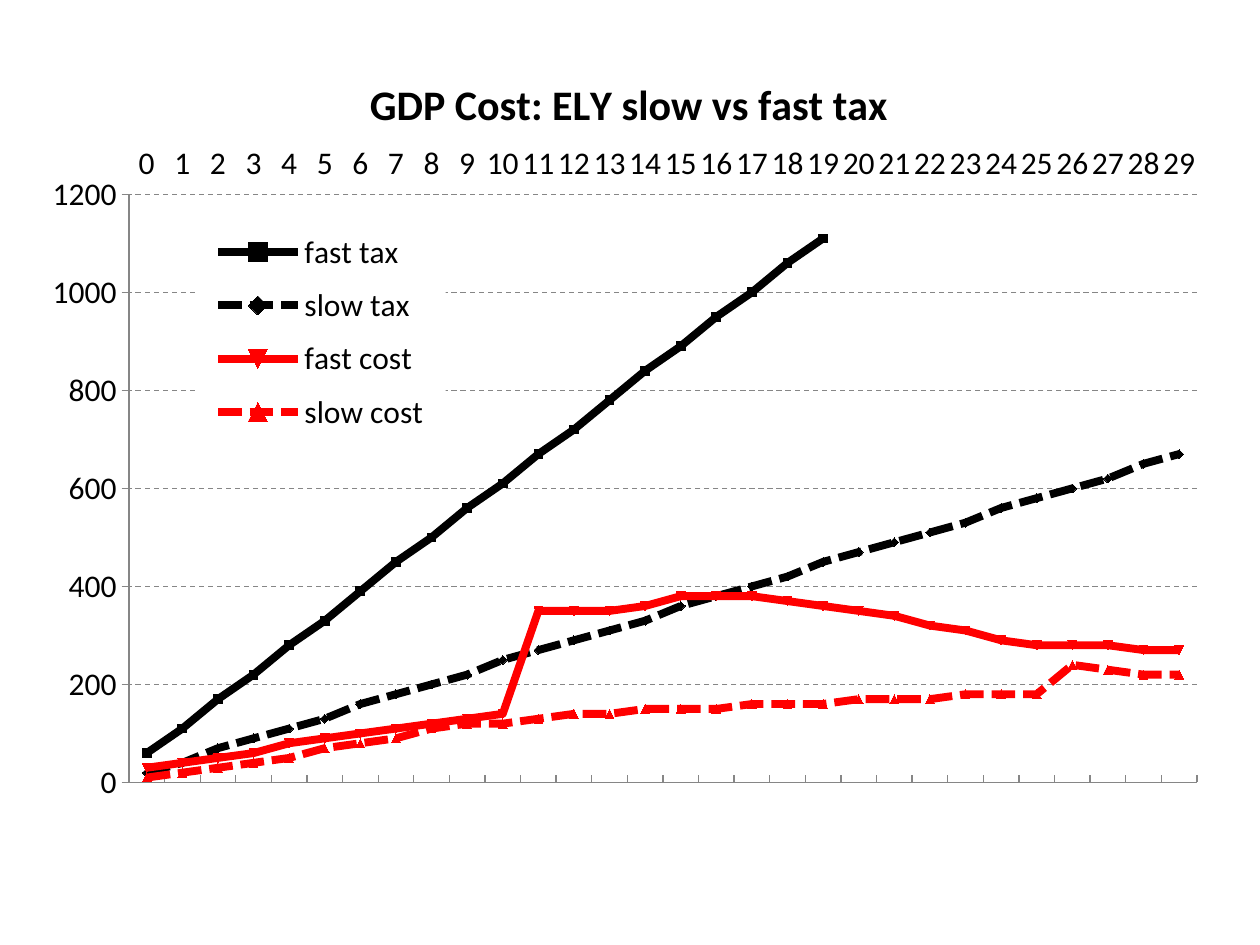
from lxml import etree
from pptx import Presentation
from pptx.chart.data import CategoryChartData
from pptx.dml.color import RGBColor
from pptx.enum.chart import XL_CHART_TYPE, XL_LEGEND_POSITION, XL_TICK_LABEL_POSITION, XL_TICK_MARK
from pptx.enum.dml import MSO_LINE
from pptx.oxml import parse_xml
from pptx.oxml.ns import nsdecls, qn
from pptx.util import Inches, Pt

LINE_CHART = XL_CHART_TYPE.LINE
LEGEND_RIGHT = XL_LEGEND_POSITION.RIGHT
LABELS_HIGH = XL_TICK_LABEL_POSITION.HIGH
TICK_IN, TICK_OUT, TICK_NONE = XL_TICK_MARK.INSIDE, XL_TICK_MARK.OUTSIDE, XL_TICK_MARK.NONE
DOTTED, DASHED = MSO_LINE.SQUARE_DOT, MSO_LINE.DASH

TITLE = "GDP Cost: ELY slow vs fast tax"
YEARS = [str(year) for year in range(30)]
SERIES = [
    ("fast tax", "tax", None,
     [60, 110, 170, 220, 280, 330, 390, 450, 500, 560,
      610, 670, 720, 780, 840, 890, 950, 1000, 1060, 1110]),
    ("slow tax", "tax", DOTTED,
     [20, 40, 70, 90, 110, 130, 160, 180, 200, 220, 250, 270, 290, 310, 330,
      360, 380, 400, 420, 450, 470, 490, 510, 530, 560, 580, 600, 620, 650, 670]),
    ("fast cost", "cost", None,
     [30, 40, 50, 60, 80, 90, 100, 110, 120, 130, 140, 350, 350, 350, 360,
      380, 380, 380, 370, 360, 350, 340, 320, 310, 290, 280, 280, 280, 270, 270]),
    ("slow cost", "cost", DOTTED,
     [10, 20, 30, 40, 50, 70, 80, 90, 110, 120, 120, 130, 140, 140, 150,
      150, 150, 160, 160, 160, 170, 170, 170, 180, 180, 180, 240, 230, 220, 220]),
]
THEME = {
    "font": "Calibri",
    "text": RGBColor(0, 0, 0),
    "tax": RGBColor(0, 0, 0),
    "cost": RGBColor(255, 0, 0),
    "axis": RGBColor(0x86, 0x86, 0x86),
    "base_size": Pt(10),
    "label_size": Pt(18),
    "title_size": Pt(24),
    "series_width": Pt(4.5),
    "axis_width": Pt(0.75),
}


def format_font(font, size, bold=False):
    font.name = THEME["font"]
    font.size = size
    font.bold = bold
    font.color.rgb = THEME["text"]


def format_line(line, color, width, dash=None):
    line.color.rgb = color
    line.width = width
    if dash is not None:
        line.dash_style = dash


def place(element, index, target=None, **fractions):
    for old in element.findall(qn("c:layout")):
        element.remove(old)
    layout = etree.Element(qn("c:layout"))
    manual = etree.SubElement(layout, qn("c:manualLayout"))
    settings = {"xMode": "edge", "yMode": "edge", **fractions}
    if target:
        settings = {"layoutTarget": target, **settings}
    for name, value in settings.items():
        etree.SubElement(manual, qn(f"c:{name}")).set("val", str(value))
    element.insert(index, layout)


def format_axis(axis, tick):
    axis.major_tick_mark = tick
    axis.minor_tick_mark = TICK_NONE
    format_font(axis.tick_labels.font, THEME["label_size"])
    format_line(axis.format.line, THEME["axis"], THEME["axis_width"])


def add_cost_chart(page):
    data = CategoryChartData()
    data.categories = YEARS
    for name, _, _, values in SERIES:
        data.add_series(name, values + [None] * (len(YEARS) - len(values)))
    chart = page.shapes.add_chart(
        LINE_CHART, Inches(0.23), Inches(0.23), Inches(9.45), Inches(6.25), data
    ).chart
    format_font(chart.font, THEME["base_size"])
    chart.plots[0].vary_by_categories = False
    for series, (_, role, dash, _) in zip(chart.plots[0].series, SERIES):
        series.smooth = False
        series.marker.style = None
        format_line(series.format.line, THEME[role], THEME["series_width"], dash)
    return chart


def format_axes(chart):
    years, values = chart.category_axis, chart.value_axis
    format_axis(years, TICK_IN)
    years.tick_label_position = LABELS_HIGH
    years.has_major_gridlines = False
    years._element.find(f"{qn('c:txPr')}/{qn('a:bodyPr')}").set("rot", "0")
    skip = etree.Element(qn("c:tickLblSkip"))
    skip.set("val", "1")
    years._element.find(qn("c:lblOffset")).addnext(skip)

    format_axis(values, TICK_OUT)
    values.minimum_scale, values.maximum_scale, values.major_unit = 0, 1200, 200
    values.has_major_gridlines = True
    format_line(values.major_gridlines.format.line, THEME["axis"], THEME["axis_width"], DASHED)


def format_title(chart):
    chart.has_title = True
    para = chart.chart_title.text_frame.paragraphs[0]
    span = para.add_run()
    span.text = TITLE
    format_font(span.font, THEME["title_size"], bold=True)
    place(chart.chart_title._element, 1, x=0.28, y=0.05)


def format_legend(chart):
    chart.has_legend = True
    legend = chart.legend
    legend.position = LEGEND_RIGHT
    legend.include_in_layout = True
    format_font(legend.font, THEME["label_size"])
    place(legend._element, 1, x=0.14, y=0.24, w=0.21, h=0.29)
    legend._element.find(qn("c:overlay")).addnext(parse_xml(
        f'<c:spPr {nsdecls("c", "a")}><a:solidFill><a:srgbClr val="FFFFFF"/></a:solidFill>'
        "<a:ln><a:noFill/></a:ln></c:spPr>"
    ))


def main():
    deck = Presentation()
    deck.slide_width, deck.slide_height = Inches(10), Inches(7.5)
    page = deck.slides.add_slide(deck.slide_layouts[6])
    chart = add_cost_chart(page)
    format_axes(chart)
    format_title(chart)
    format_legend(chart)
    plot_area = chart._chartSpace.chart.plotArea
    place(plot_area, 0, target="inner", x=0.084, y=0.21, w=0.897, h=0.747)
    deck.save("out.pptx")


if __name__ == "__main__":
    main()
